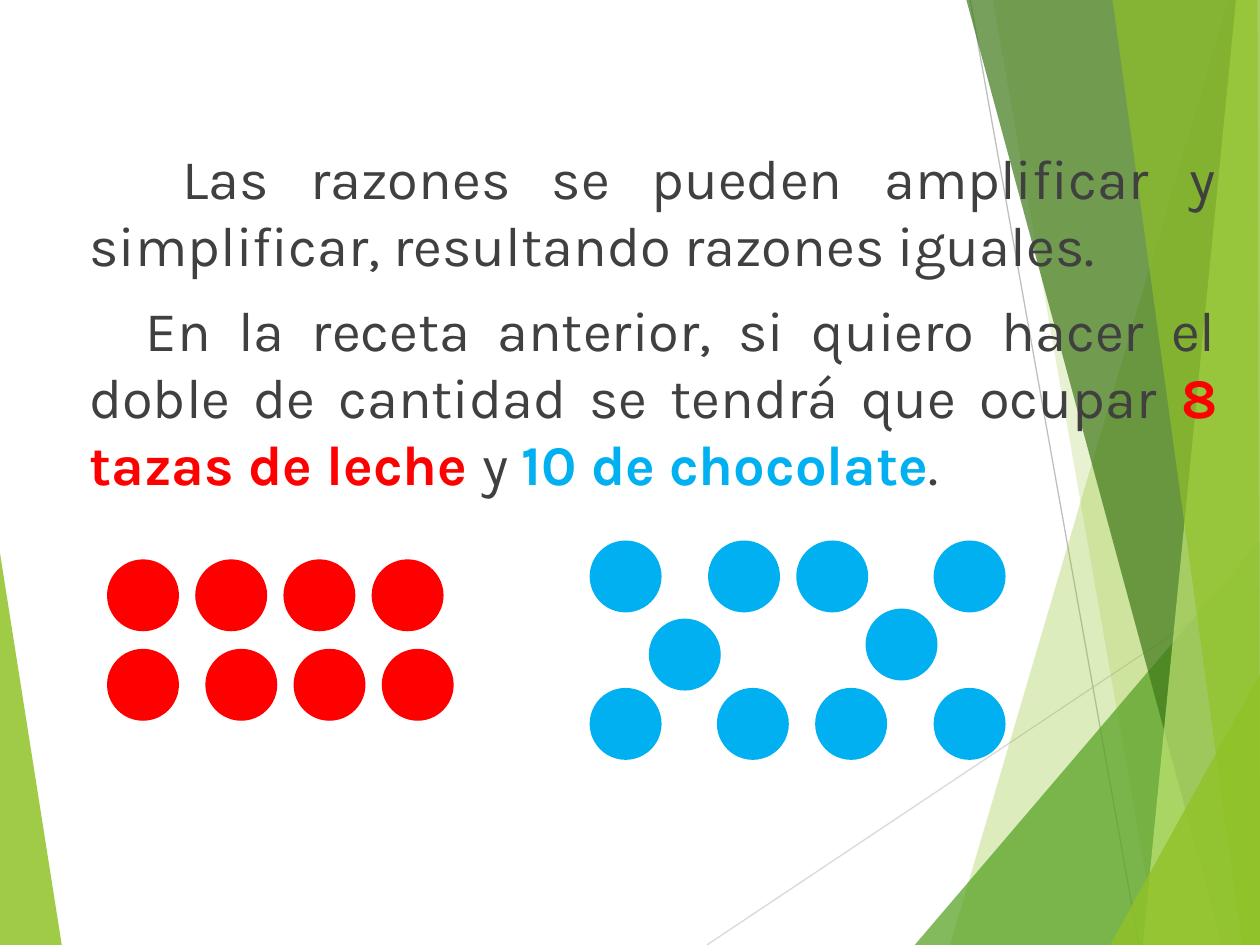
from lxml.etree import SubElement as Sub
from pptx import Presentation
from pptx.dml.color import RGBColor
from pptx.enum.shapes import MSO_CONNECTOR as Conn, MSO_SHAPE as Kind
from pptx.enum.text import PP_ALIGN as Align
from pptx.oxml.ns import qn
from pptx.util import Inches, Pt

RED, BLUE, GREY, LEAF = "FF0000", "00B0F0", "404040", "90C226"
DOT = 0.55

FACETS = [
    ([(9.75, 0), (7.54, 7.5), (10, 7.5), (10, 0)], LEAF, 30),
    ([(7.88, 0), (9.19, 7.5), (10, 7.5), (10, 0)], LEAF, 20),
    ([(7.26, 7.5), (10, 4.29), (10, 7.5)], "54A021", 72),
    ([(7.67, 0), (9.7, 7.5), (10, 7.5), (10, 0)], "3F7819", 70),
    ([(9.81, 0), (9.07, 7.5), (10, 7.5), (10, 0)], "C0E474", 70),
    ([(8.83, 0), (9.86, 7.5), (10, 7.5), (9.98, 0)], LEAF, 65),
    ([(8.81, 7.5), (10, 5.35), (10, 7.5)], LEAF, 80),
]


def tint(part, color):
    """Give a fill, line or font a solid hex colour."""
    part.rgb = RGBColor.from_string(color)


def paint(fill, color):
    """Make a fill solid in a hex colour."""
    fill.solid()
    tint(fill.fore_color, color)


def facet(slide, x, y, points, color, alpha):
    """Draw a translucent polygon with its points offset by x and y."""
    spots = [(Inches(x + px), Inches(y + py)) for px, py in points]
    form = slide.shapes.build_freeform(*spots[0])
    form.add_line_segments(spots[1:], close=True)
    shape = form.convert_to_shape()
    shape.shadow.inherit = False
    paint(shape.fill, color)
    shape.line.fill.background()
    node = shape.fill._xPr.find(qn("a:solidFill"))[0]
    Sub(node, qn("a:alpha")).set("val", str(alpha * 1000))


def stroke(slide, x, y, start, end, color):
    """Draw a thin straight line offset by x and y."""
    ends = [Inches(v) for v in (x + start[0], y + start[1], x + end[0], y + end[1])]
    line = slide.shapes.add_connector(Conn.STRAIGHT, *ends)
    tint(line.line.color, color)
    line.line.width = Pt(0.75)
    Sub(line._element.spPr, qn("a:effectLst"))


def backdrop(slide, x, y):
    """Draw the green facets and fine lines."""
    facet(slide, x, y, [(0, 4.39), (0.49, 7.5), (0, 7.5)], LEAF, 85)
    stroke(slide, x, y, (5.61, 7.5), (10, 4.57), "D9D9D9")
    stroke(slide, x, y, (7.7, 0), (9.04, 7.5), "BFBFBF")
    for points, color, alpha in FACETS:
        facet(slide, x, y, points, color, alpha)


def write(para, text, color=GREY, bold=False, size=32, face="Karla"):
    """Add a formatted run to a paragraph."""
    run = para.add_run()
    run.text = text
    run.font.name, run.font.size, run.font.bold = face, Pt(size), bold
    tint(run.font.color, color)


def lay(para, indent):
    """Justify a paragraph and indent its first line."""
    para.alignment = Align.JUSTIFY
    para.space_before = Pt(10)
    props = para._p.get_or_add_pPr()
    props.set("marL", str(Inches(0.38)))
    props.set("indent", str(Inches(indent)))


def body(slide, x, y, w, h):
    """Write the two paragraphs on ratios."""
    box = slide.shapes.add_textbox(Inches(x), Inches(y), Inches(w), Inches(h))
    frame = box.text_frame
    frame.word_wrap = True
    first, second = frame.paragraphs[0], frame.add_paragraph()
    lay(first, 0.74)
    write(first, "Las razones se pueden amplificar y simplificar, "
                 "resultando razones iguales.")
    lay(second, 0.45)
    write(second, "En la receta anterior, si quiero hacer el doble de "
                  "cantidad se tendrá que ocupar ")
    write(second, "8 tazas de leche ", color=RED, bold=True)
    write(second, "y ")
    write(second, "10 de chocolate", color=BLUE, bold=True)
    write(second, ".")


def dots(slide, x, y, spots, color):
    """Draw equal discs at spots relative to x and y."""
    for dx, dy in spots:
        disc = slide.shapes.add_shape(
            Kind.OVAL, Inches(x + dx), Inches(y + dy), Inches(DOT), Inches(DOT))
        disc.shadow.inherit = False
        paint(disc.fill, color)
        tint(disc.line.color, color)
        disc.line.width = Pt(1.5)


def main():
    """Build and save the slide."""
    deck = Presentation()
    deck.slide_width, deck.slide_height = Inches(10), Inches(7.5)
    slide = deck.slides.add_slide(deck.slide_layouts[6])
    backdrop(slide, 0, 0)
    body(slide, 0.23, 1.09, 9.53, 5.68)
    step = 0.7
    milk = [(i * step, 0) for i in range(4)]
    milk += [(i * step + (0.08 if i else 0), 0.71) for i in range(4)]
    dots(slide, 0.86, 4.45, milk, RED)
    cocoa = [(dx, 0) for dx in (0, 0.94, 1.64, 2.73)]
    cocoa += [(0.47, 0.62), (2.19, 0.54)]
    cocoa += [(dx, 1.17) for dx in (0, 1.01, 1.79, 2.73)]
    dots(slide, 4.69, 4.3, cocoa, BLUE)
    deck.save("out.pptx")


if __name__ == "__main__":
    main()
